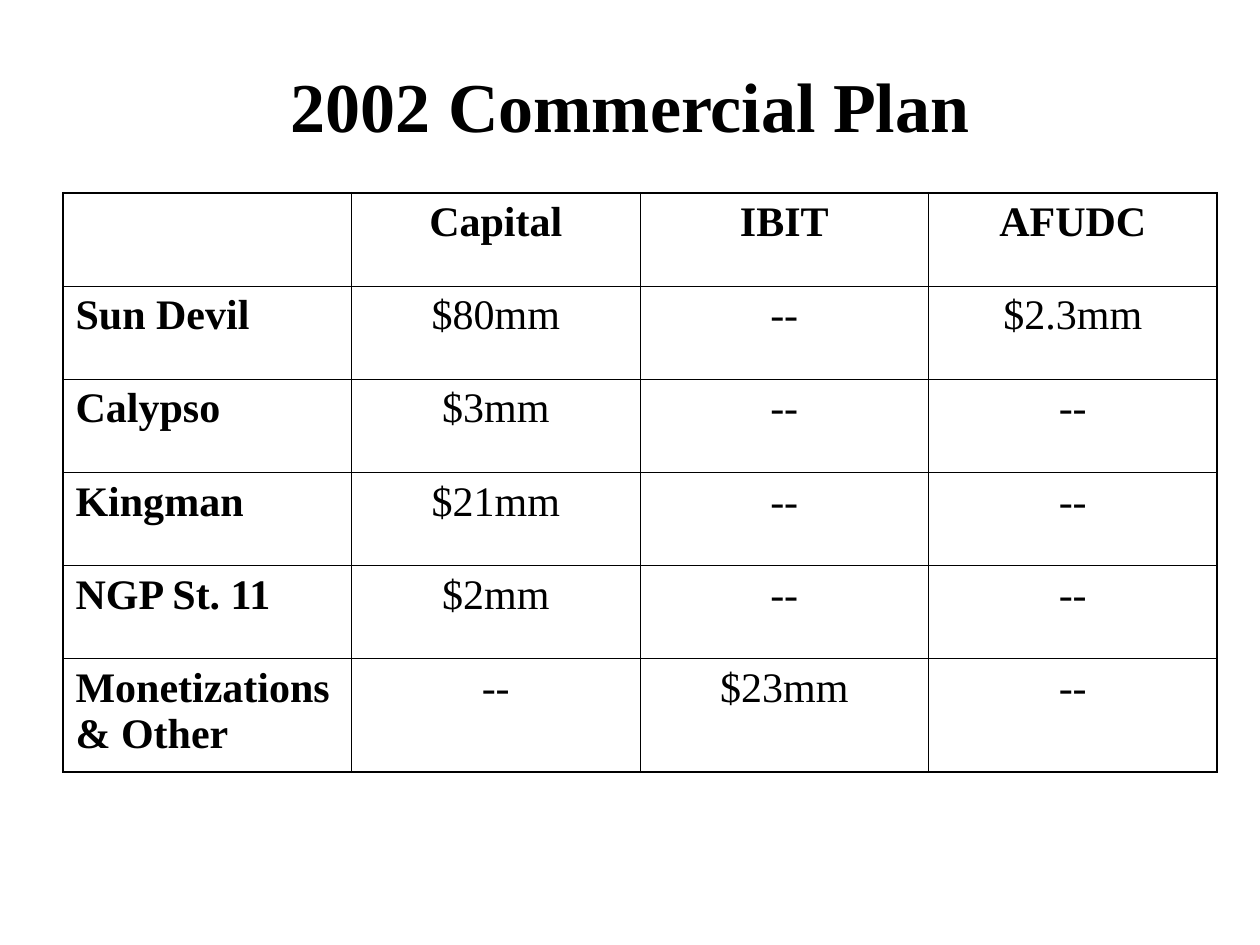
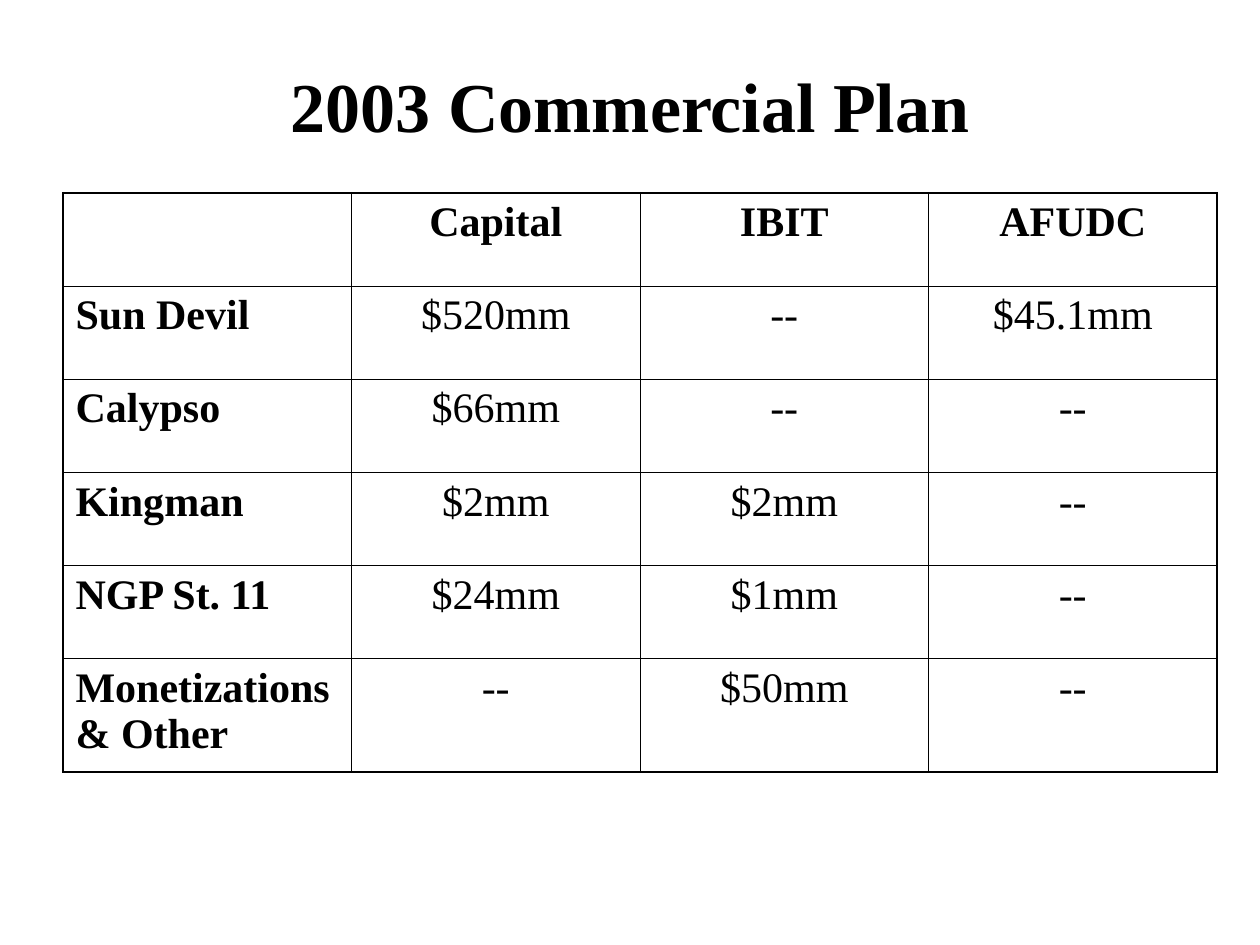
from lxml.etree import SubElement
from pptx import Presentation
from pptx.dml.color import RGBColor
from pptx.enum.text import MSO_ANCHOR, PP_ALIGN
from pptx.oxml.ns import qn
from pptx.util import Pt

EMU_PER_PX = 9144
SLIDE_WIDTH, SLIDE_HEIGHT = 1000, 750
COLORS = {"text": "000000", "border": "000000"}
MEASURES = ["Capital", "IBIT", "AFUDC"]
PROJECTS = ["Sun Devil", "Calypso", "Kingman", "NGP St. 11", "Monetizations & Other"]
NONE = "--"
PLANS = {
    2002: [
        ["$80mm", NONE, "$2.3mm"],
        ["$3mm", NONE, NONE],
        ["$21mm", NONE, NONE],
        ["$2mm", NONE, NONE],
        [NONE, "$23mm", NONE],
    ],
    2003: [
        ["$520mm", NONE, "$45.1mm"],
        ["$66mm", NONE, NONE],
        ["$2mm", "$2mm", NONE],
        ["$24mm", "$1mm", NONE],
        [NONE, "$50mm", NONE],
    ],
}


def px(length):
    return length * EMU_PER_PX


class PlanDeck:
    font_name = "Times New Roman"
    title_size = 40
    table_size = 24
    outer_border = 1.08
    inner_border = 0.45
    column_width = 229
    row_height = 74
    last_row_height = 90

    def __init__(self):
        self.presentation = Presentation()
        self.presentation.slide_width = px(SLIDE_WIDTH)
        self.presentation.slide_height = px(SLIDE_HEIGHT)
        self.slide = None

    def new_slide(self):
        self.slide = self.presentation.slides.add_slide(self.presentation.slide_layouts[6])

    def style_text(self, frame, text, size, bold, align):
        frame.text = text
        paragraph = frame.paragraphs[0]
        paragraph.alignment = align
        for run in paragraph.runs:
            run.font.name = self.font_name
            run.font.size = Pt(size)
            run.font.bold = bold
            run.font.color.rgb = RGBColor.from_string(COLORS["text"])

    def title(self, text):
        heading = self.slide.shapes.add_textbox(px(75), px(33), px(850), px(100)).text_frame
        heading.word_wrap = True
        heading.vertical_anchor = MSO_ANCHOR.MIDDLE
        self.style_text(heading, text, self.title_size, True, PP_ALIGN.CENTER)

    def border(self, cell, side, is_outer):
        width = Pt(self.outer_border if is_outer else self.inner_border)
        line = SubElement(cell._tc.get_or_add_tcPr(), qn(f"a:ln{side}"), w=str(width))
        SubElement(SubElement(line, qn("a:solidFill")), qn("a:srgbClr"), val=COLORS["border"])

    def table(self, rows):
        row_count, column_count = len(rows), len(rows[0])
        heights = [self.row_height] * (row_count - 1) + [self.last_row_height]
        grid = self.slide.shapes.add_table(
            row_count, column_count, px(50), px(153),
            px(self.column_width * column_count), px(sum(heights)),
        ).table
        grid.first_row = False
        grid.horz_banding = False
        for column in grid.columns:
            column.width = px(self.column_width)
        for r, (values, height) in enumerate(zip(rows, heights)):
            grid.rows[r].height = px(height)
            for c, value in enumerate(values):
                cell = grid.cell(r, c)
                align = PP_ALIGN.CENTER if c else PP_ALIGN.LEFT
                self.style_text(cell.text_frame, value, self.table_size, r == 0 or c == 0, align)
                self.border(cell, "L", c == 0)
                self.border(cell, "R", c == column_count - 1)
                self.border(cell, "T", r == 0)
                self.border(cell, "B", r == row_count - 1)
                cell.fill.background()


def main():
    deck = PlanDeck()
    for year, amounts in PLANS.items():
        deck.new_slide()
        deck.title(f"{year} Commercial Plan")
        project_rows = [[project, *row] for project, row in zip(PROJECTS, amounts)]
        deck.table([["", *MEASURES], *project_rows])
    deck.presentation.save("out.pptx")


if __name__ == "__main__":
    main()
